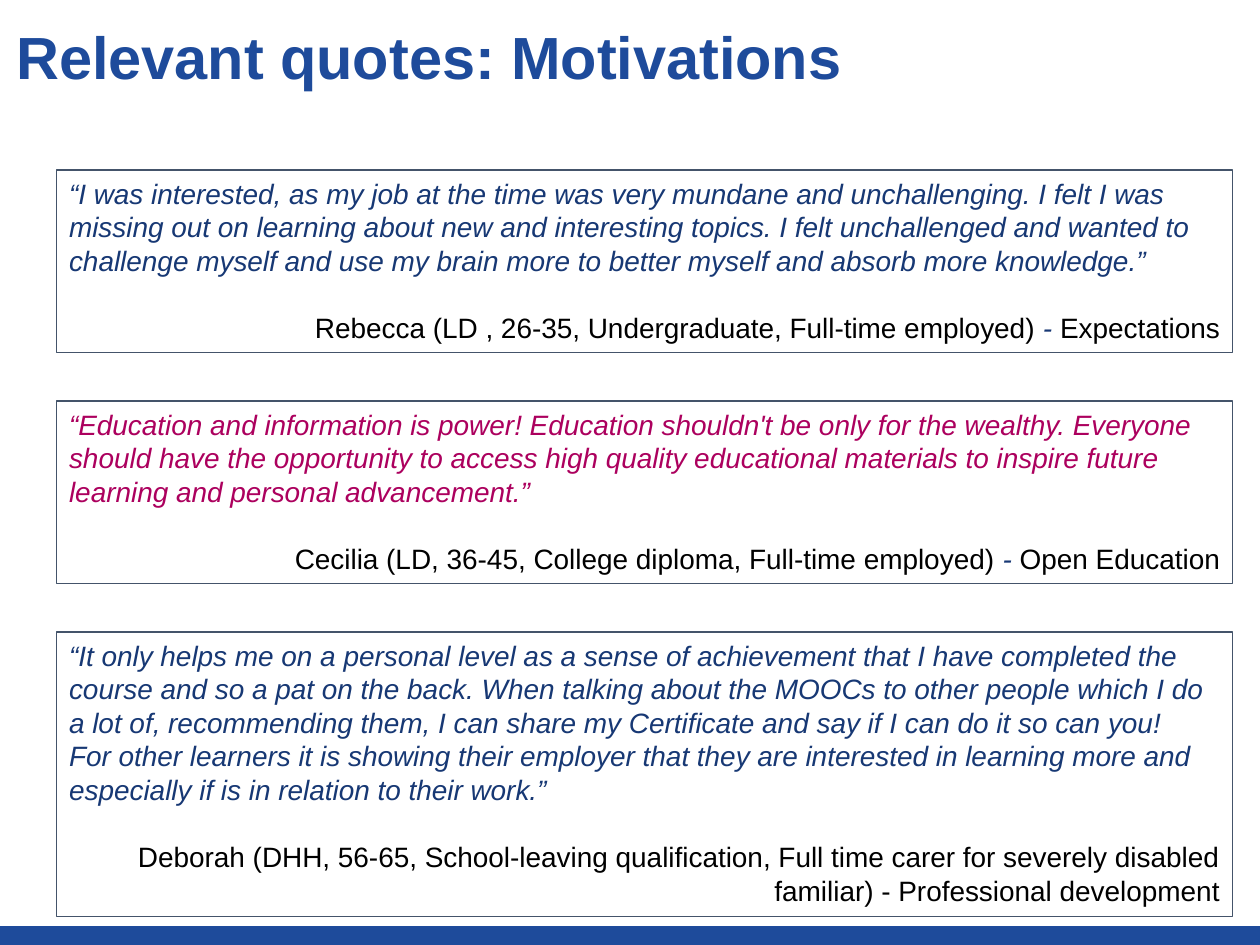
import pptx
import pptx.dml.color
import pptx.enum.shapes
import pptx.enum.text
import pptx.util

Pt = pptx.util.Pt
ALIGN = pptx.enum.text.PP_ALIGN
ANCHOR = pptx.enum.text.MSO_ANCHOR

BLUE, NAVY, MAGENTA, SLATE, BLACK = "1E4B9B", "173874", "AC005E", "44546A", "000000"
TITLE = "Relevant quotes: Motivations"

# Each quote: box height, colour, quote paragraphs, source runs as (text, is_dash)
QUOTES = [
    (104.4, NAVY,
     ["“I was interested, as my job at the time was very mundane and unchallenging. "
      "I felt I was missing out on learning about new and interesting topics. "
      "I felt unchallenged and wanted to challenge myself and use my brain more "
      "to better myself and absorb more knowledge.”"],
     [("Rebecca (LD , 26-35, Undergraduate, Full-time employed) ", False),
      ("- ", True), ("Expectations", False)]),
    (104.4, MAGENTA,
     ["“Education and information is power! Education shouldn't be only for the wealthy. "
      "Everyone should have the opportunity to access high quality educational materials "
      "to inspire future learning and personal advancement.”"],
     [("Cecilia (LD, 36-45, College diploma, Full-time employed) ", False),
      ("- ", True), ("Open Education", False)]),
    (162.7, NAVY,
     ["“It only helps me on a personal level as a sense of achievement that I have "
      "completed the course and so a pat on the back. When talking about the MOOCs to "
      "other people which I do a lot of, recommending them, I can share my Certificate "
      "and say if I can do it so can you!",
      "For other learners it is showing their employer that they are interested in "
      "learning more and especially if is in relation to their work.”"],
     [("Deborah (DHH, 56-65, School-leaving qualification, Full time carer for severely "
       "disabled familiar) - Professional development", False)]),
]
BOX_LEFT, BOX_TOP, BOX_WIDTH, BOX_GAP = 32.4, 97.2, 671.8, 27.6
SOURCE_GAP = 19.2


def rgb(value):
    return pptx.dml.color.RGBColor.from_string(value)


def add_run(p, text, size, color, bold=False, italic=False):
    r = p.add_run()
    r.text = text
    r.font.name = "Arial"
    r.font.size = Pt(size)
    r.font.bold = bold
    r.font.italic = italic
    r.font.color.rgb = rgb(color)


def add_rect(s, left, top, width, height, line, weight, fill=None):
    sp = s.shapes.add_shape(pptx.enum.shapes.MSO_SHAPE.RECTANGLE,
                            Pt(left), Pt(top), Pt(width), Pt(height))
    sp.shadow.inherit = False
    if fill:
        sp.fill.solid()
        sp.fill.fore_color.rgb = rgb(fill)
    else:
        sp.fill.background()
    sp.line.color.rgb = rgb(line)
    sp.line.width = Pt(weight)
    return sp


def add_title(s):
    tf = s.shapes.add_textbox(Pt(6.5), Pt(12.2), Pt(581.8), Pt(38.2)).text_frame
    tf.word_wrap = True
    tf.vertical_anchor = ANCHOR.TOP
    tf.margin_left, tf.margin_right = Pt(2.9), Pt(1.4)
    tf.margin_top, tf.margin_bottom = Pt(5.5), Pt(2.9)
    p = tf.paragraphs[0]
    p.line_spacing = 0.85
    add_run(p, TITLE, 34, BLUE, bold=True)


def add_quote(s, top, height, color, paragraphs, source):
    tf = add_rect(s, BOX_LEFT, top, BOX_WIDTH, height, SLATE, 0.75).text_frame
    tf.word_wrap = True
    tf.vertical_anchor = ANCHOR.TOP
    for i, text in enumerate(paragraphs):
        p = tf.add_paragraph() if i else tf.paragraphs[0]
        p.alignment = ALIGN.LEFT
        add_run(p, text, 16, color, italic=True)
    p = tf.add_paragraph()
    p.alignment = ALIGN.RIGHT
    p.space_before = Pt(SOURCE_GAP)
    for text, is_dash in source:
        add_run(p, text, 16, NAVY if is_dash else BLACK, italic=is_dash)


def main():
    prs = pptx.Presentation()
    prs.slide_width, prs.slide_height = Pt(720), Pt(540)
    s = prs.slides.add_slide(prs.slide_layouts[6])
    add_rect(s, 0, 529.9, 720, 9.4, BLUE, 1, fill=BLUE)
    add_title(s)
    top = BOX_TOP
    for height, color, paragraphs, source in QUOTES:
        add_quote(s, top, height, color, paragraphs, source)
        top += height + BOX_GAP
    prs.save("out.pptx")


if __name__ == "__main__":
    main()
